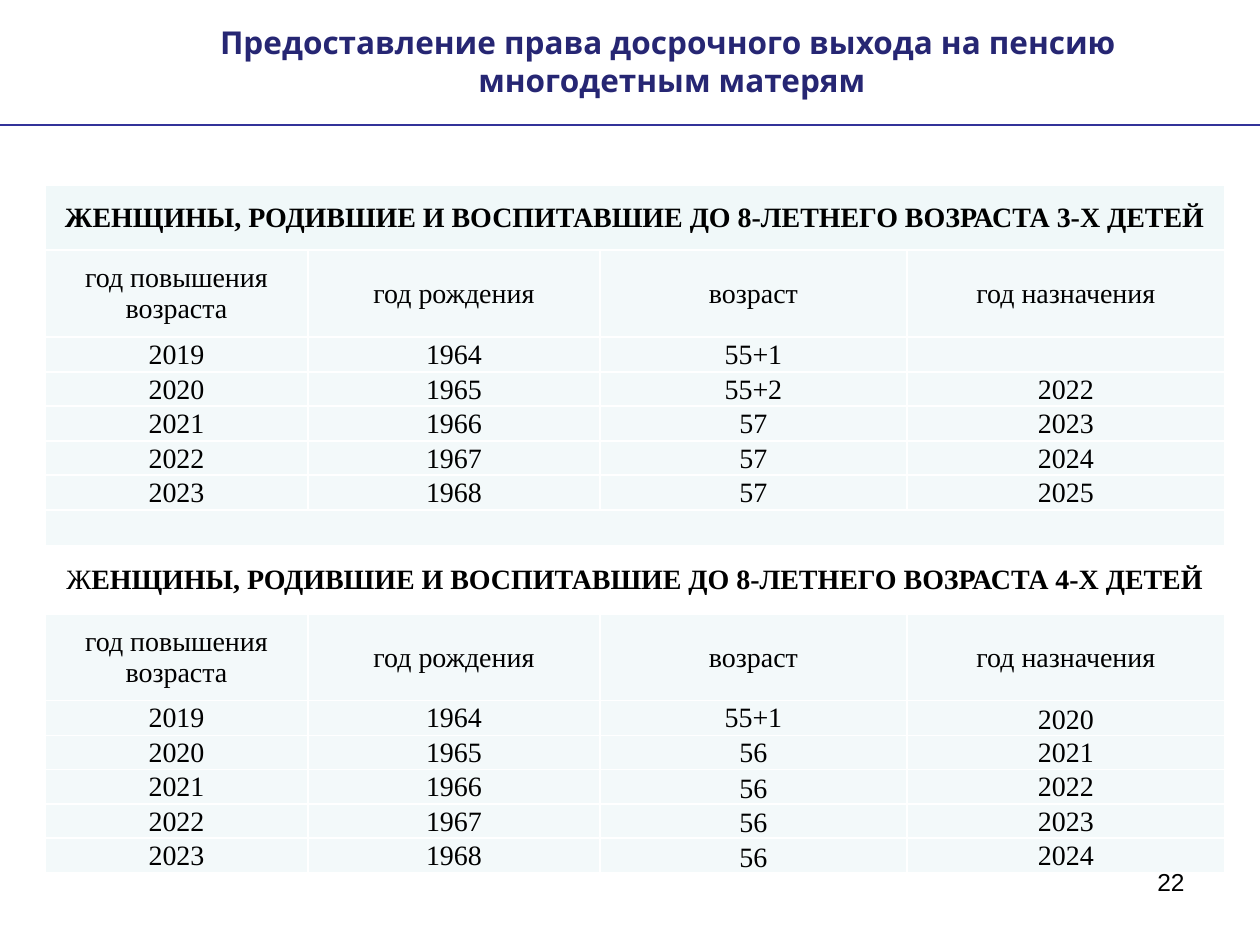
from itertools import cycle

from lxml import etree
from pptx import Presentation
from pptx import util as u
from pptx.dml.color import RGBColor
from pptx.enum import shapes, text
from pptx.oxml.ns import qn

TITLE = ["Предоставление права досрочного выхода на пенсию ",
         "многодетным матерям"]
HEADS = ["год повышения возраста", "год рождения", "возраст", "год назначения"]
YEARS = range(2019, 2024)
BIRTHS = range(1964, 1969)
# Each heading is a list of (text, bold) runs; low marks cells set at the bottom.
BLOCKS = [
    {"head": [("ЖЕНЩИНЫ, РОДИВШИЕ И ВОСПИТАВШИЕ ДО 8-ЛЕТНЕГО ВОЗРАСТА 3-Х ДЕТЕЙ", True)],
     "fill": "F0F8F9", "high": 65, "sub": 87,
     "ages": ["55+1", "55+2", "57", "57", "57"],
     "dates": ["", "2022", "2023", "2024", "2025"], "low": []},
    {"head": [("Ж", False),
              ("ЕНЩИНЫ, РОДИВШИЕ И ВОСПИТАВШИЕ ДО 8-ЛЕТНЕГО ВОЗРАСТА 4-Х ДЕТЕЙ", True)],
     "fill": "FFFFFF", "high": 69, "sub": 86,
     "ages": ["55+1", "56", "56", "56", "56"],
     "dates": ["2020", "2021", "2022", "2023", "2024"],
     "low": [(0, 3), (2, 2), (3, 2), (4, 2)]},
]
COLS = [263, 292, 307, 318]
GAP = 35
PALE, WHITE, BLACK, NAVY, BLUE = "F3F9FA", "FFFFFF", "000000", "262673", "333399"
MID, LOW = text.MSO_ANCHOR.MIDDLE, text.MSO_ANCHOR.BOTTOM
CENTER, RIGHT = text.PP_ALIGN.CENTER, text.PP_ALIGN.RIGHT


def px(n):
    return u.Emu(round(n * 914400 / 126))


def color(code):
    return RGBColor.from_string(code)


def write(para, runs, face, size, tint, align=CENTER):
    para.alignment = align
    for words, bold in runs:
        run = para.add_run()
        run.text = words
        for key, val in {"name": face, "size": u.Pt(size), "bold": bold}.items():
            setattr(run.font, key, val)
        run.font.color.rgb = color(tint)


def edge(cell):
    """Draw a thin white border on all four sides, ahead of the cell's fill."""
    props = cell._tc.get_or_add_tcPr()
    for spot, side in enumerate(("a:lnL", "a:lnR", "a:lnT", "a:lnB")):
        line = etree.Element(qn(side), w=str(u.Pt(1)))
        fill = etree.SubElement(line, qn("a:solidFill"))
        etree.SubElement(fill, qn("a:srgbClr"), val=WHITE)
        props.insert(spot, line)


def put(cell, runs, fill=PALE, anchor=MID):
    form = {"margin_left": px(1), "margin_right": px(1), "margin_top": px(1),
            "margin_bottom": 0, "vertical_anchor": anchor}
    for key, val in form.items():
        setattr(cell, key, val)
    cell.fill.solid()
    cell.fill.fore_color.rgb = color(fill)
    edge(cell)
    para = cell.text_frame.paragraphs[0]
    if runs:
        write(para, runs, "Times New Roman", 16, BLACK)
    else:
        etree.SubElement(para._p, qn("a:endParaRPr"), sz="1600")


def plan():
    """List the rows as (height, cells); a cell is (runs, fill, anchor)."""
    rows = []
    for block in BLOCKS:
        if rows:
            rows.append((GAP, [([], PALE, MID)]))
        rows.append((block["high"], [(block["head"], block["fill"], MID)]))
        rows.append((block["sub"], [([(h, False)], PALE, MID) for h in HEADS]))
        data = zip(YEARS, BIRTHS, block["ages"], block["dates"])
        for r, (high, vals) in enumerate(zip(cycle((35, 34)), data)):
            rows.append((high, [
                ([(str(v), False)] if v else [], PALE,
                 LOW if (r, c) in block["low"] else MID)
                for c, v in enumerate(vals)]))
    return rows


def main():
    deck = Presentation()
    deck.slide_width, deck.slide_height = px(1260), px(945)
    slide = deck.slides.add_slide(deck.slide_layouts[5])

    title = slide.shapes.title
    title.left, title.top, title.width, title.height = map(px, (84, 16, 1176, 90))
    frame = title.text_frame
    frame.vertical_anchor = MID
    frame.auto_size = text.MSO_AUTO_SIZE.NONE
    for n, words in enumerate(TITLE):
        para = frame.add_paragraph() if n else frame.paragraphs[0]
        write(para, [(words, True)], "Karla", 18, NAVY)

    rows = plan()
    total = sum(high for high, _ in rows)
    table = slide.shapes.add_table(
        len(rows), len(COLS), px(45), px(185), px(sum(COLS)), px(total)).table
    table.first_row = table.horz_banding = False
    for col, wide in zip(table.columns, COLS):
        col.width = px(wide)
    for r, (high, cells) in enumerate(rows):
        table.rows[r].height = px(high)
        if len(cells) == 1:
            table.cell(r, 0).merge(table.cell(r, len(COLS) - 1))
        for c, parts in enumerate(cells):
            put(table.cell(r, c), *parts)

    rule = slide.shapes.add_connector(
        shapes.MSO_CONNECTOR.STRAIGHT, px(1260), px(125), 0, px(125))
    rule.line.color.rgb = color(BLUE)
    rule.line.width = u.Pt(1.5)
    etree.SubElement(rule._element.spPr, qn("a:effectLst"))

    page = slide.shapes.add_textbox(*map(px, (903, 861, 294, 65))).text_frame
    page.word_wrap = True
    write(page.paragraphs[0], [("22", False)], "Arial", 14, BLACK, RIGHT)

    deck.save("out.pptx")


if __name__ == "__main__":
    main()
